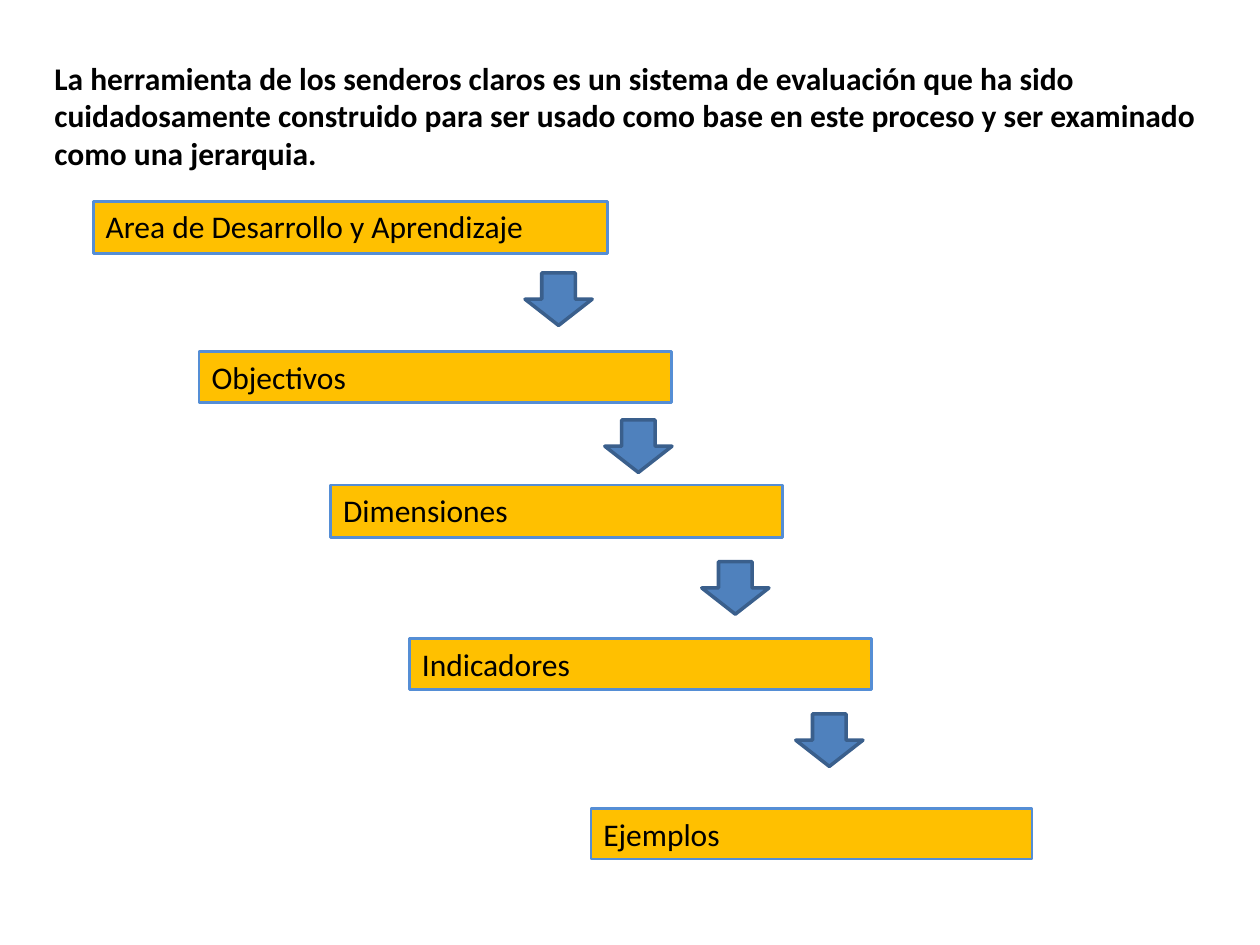
from pptx import Presentation
from pptx.dml.color import RGBColor
from pptx.enum.shapes import MSO_SHAPE as Shape
from pptx.enum.text import MSO_ANCHOR as Anchor, PP_ALIGN as Align
from pptx.util import Pt

# Content
INTRO = ("La herramienta de los senderos claros es un sistema de evaluación que ha sido "
         "cuidadosamente construido para ser usado como base en este proceso y ser examinado "
         "como una jerarquia.")
# Hierarchy levels: text, left, top, width, height
LEVELS = [
    ("Area de Desarrollo y Aprendizaje", 53.3, 115, 293.8, 30),
    ("Objectivos", 113.8, 200.9, 270, 29),
    ("Dimensiones", 189, 277.2, 258, 30),
    ("Indicadores", 234, 365, 264, 29),
    ("Ejemplos", 337.7, 462, 252, 29),
]
# Arrows between levels: left, top
ARROWS = [(300, 156), (345.6, 240), (401, 321), (454.7, 408)]
ARROW_SIZE = (38.4, 30)


def color(value):
    return RGBColor.from_string(value)


def write(shape, text, bold=False):
    frame = shape.text_frame
    frame.word_wrap = True
    frame.vertical_anchor = Anchor.TOP
    paragraph = frame.paragraphs[0]
    paragraph.text = text
    paragraph.alignment = Align.LEFT
    font = paragraph.font
    font.name, font.size, font.bold = "Calibri", Pt(18), bold
    font.color.rgb = color("000000")


def add_shape(slide, kind, bounds, fill, line, line_width):
    shape = slide.shapes.add_shape(kind, *map(Pt, bounds))
    shape.shadow.inherit = False
    shape.fill.solid()
    shape.fill.fore_color.rgb = color(fill)
    shape.line.color.rgb = color(line)
    shape.line.width = Pt(line_width)
    return shape


presentation = Presentation()
presentation.slide_width, presentation.slide_height = Pt(720), Pt(540)
slide = presentation.slides.add_slide(presentation.slide_layouts[6])

# Introduction
intro = slide.shapes.add_textbox(Pt(24), Pt(30), Pt(672), Pt(72.7))
write(intro, INTRO, bold=True)

# Hierarchy boxes
for text, *bounds in LEVELS:
    box = add_shape(slide, Shape.RECTANGLE, bounds, "FFC000", "558ED5", 1.5)
    write(box, text)

# Arrows
for position in ARROWS:
    add_shape(slide, Shape.DOWN_ARROW, position + ARROW_SIZE, "4F81BD", "3A5F8C", 2)

presentation.save("out.pptx")
